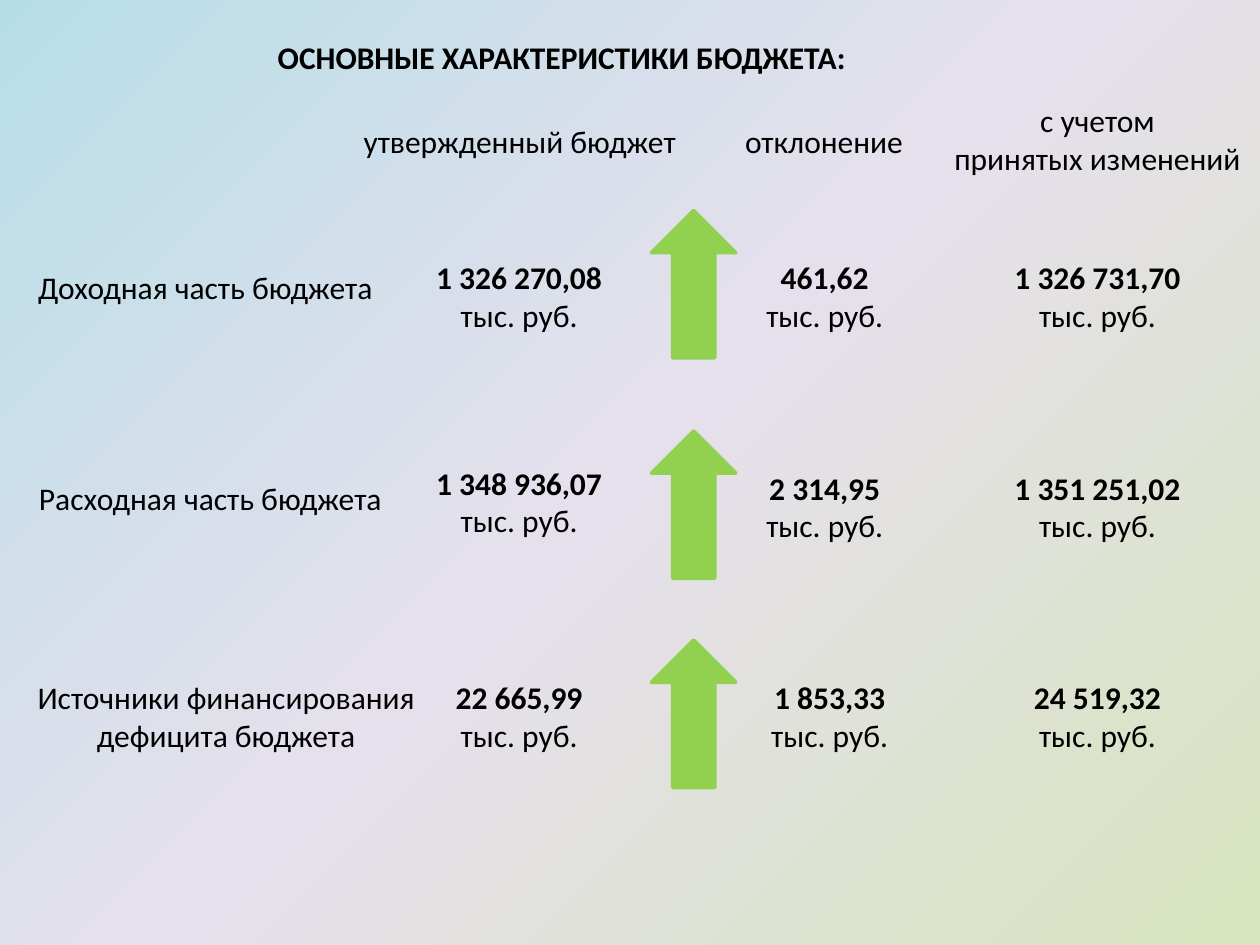
from pptx import Presentation
from pptx.dml.color import RGBColor
from pptx.enum.shapes import MSO_SHAPE
from pptx.enum.text import MSO_ANCHOR, MSO_AUTO_SIZE, PP_ALIGN
from pptx.oxml import parse_xml
from pptx.oxml.ns import nsdecls
from pptx.util import Inches, Pt

BLACK = RGBColor(0x00, 0x00, 0x00)
GREEN = RGBColor(0x92, 0xD0, 0x50)
BACKDROP = {
    0: RGBColor(0xD7, 0xE4, 0xBD),
    50: RGBColor(0xE6, 0xE0, 0xEC),
    100: RGBColor(0xB7, 0xDE, 0xE8),
}

FONT = {"name": "Calibri", "size": Pt(18)}
FRAME = {"vertical_anchor": MSO_ANCHOR.TOP, "auto_size": MSO_AUTO_SIZE.SHAPE_TO_FIT_TEXT}
UNIT = "тыс. руб."
LINE_HEIGHT, TWO_LINES = 0.4, 0.71

# Boxes are left, top, width, height in inches
TITLE = ("ОСНОВНЫЕ ХАРАКТЕРИСТИКИ БЮДЖЕТА:", (2.08, 0.25, 4.76, LINE_HEIGHT))
HEADINGS = [
    (["утвержденный бюджет"], (2.75, 0.92, 2.75, LINE_HEIGHT)),
    (["отклонение"], (5.75, 0.92, 1.58, LINE_HEIGHT)),
    (["с учетом", "принятых изменений"], (7.42, 0.75, 2.58, TWO_LINES)),
]
LABEL_LEFT = 0.17
ARROW_LEFT, ARROW_WIDTH, ARROW_HEIGHT = 5.17, 0.67, 1.17
# Each amount: value, left, top, width
ROWS = [
    {
        "label": ("Доходная часть бюджета", 2.08, 2.92, LINE_HEIGHT),
        "arrow_top": 1.67,
        "amounts": [("1 326 270,08", 3.33, 2, 1.58), ("461,62", 5.92, 2, 1.25),
                    ("1 326 731,70", 7.75, 2, 1.92)],
    },
    {
        "label": ("Расходная часть бюджета", 3.75, 3, LINE_HEIGHT),
        "arrow_top": 3.42,
        "amounts": [("1 348 936,07", 3.33, 3.63, 1.58), ("2 314,95", 5.92, 3.67, 1.25),
                    ("1 351 251,02", 7.92, 3.67, 1.58)],
    },
    {
        "label": ("Источники финансирования дефицита бюджета", 5.33, 3.25, TWO_LINES),
        "arrow_top": 5.08,
        "amounts": [("22 665,99", 3.33, 5.33, 1.58), ("1 853,33", 5.92, 5.33, 1.33),
                    ("24 519,32", 7.92, 5.33, 1.58)],
    },
]


def apply_format(target, values):
    for attribute, value in values.items():
        setattr(target, attribute, value)


def write_lines(frame, lines, wrap=True):
    """Fill a text frame with centred (text, bold) lines."""
    apply_format(frame, FRAME | {"word_wrap": wrap})
    for index, (text, bold) in enumerate(lines):
        paragraph = frame.add_paragraph() if index else frame.paragraphs[0]
        paragraph.alignment = PP_ALIGN.CENTER
        run = paragraph.add_run()
        run.text = text
        apply_format(run.font, FONT | {"bold": bold})
        run.font.color.rgb = BLACK


def add_text(slide, box, lines):
    write_lines(slide.shapes.add_textbox(*map(Inches, box)).text_frame, lines)


def paint_background(slide):
    """Spread the gradient from the lower right corner."""
    stops = "".join(
        f'<a:gs pos="{percent * 1000}"><a:srgbClr val="{color}"/></a:gs>'
        for percent, color in BACKDROP.items()
    )
    background = parse_xml(
        f'<p:bg {nsdecls("p", "a")}><p:bgPr><a:gradFill rotWithShape="1">'
        f'<a:gsLst>{stops}</a:gsLst><a:path path="circle">'
        '<a:fillToRect l="100000" t="100000"/></a:path></a:gradFill>'
        '<a:effectLst/></p:bgPr></p:bg>'
    )
    slide.element.cSld.insert(0, background)


def place_title(slide, text, box):
    title = slide.shapes.title
    apply_format(title, dict(zip(("left", "top", "width", "height"), map(Inches, box))))
    write_lines(title.text_frame, [(text, True)], wrap=False)


def add_growth_arrow(slide, box):
    arrow = slide.shapes.add_shape(MSO_SHAPE.DOWN_ARROW, *map(Inches, box))
    arrow.rotation = 180
    arrow.shadow.inherit = False
    arrow.fill.solid()
    arrow.fill.fore_color.rgb = GREEN
    arrow.line.color.rgb = GREEN
    arrow.line.width = Pt(2)


def add_budget_row(slide, label, arrow_top, amounts):
    name, top, width, height = label
    add_text(slide, (LABEL_LEFT, top, width, height), [(name, False)])
    add_growth_arrow(slide, (ARROW_LEFT, arrow_top, ARROW_WIDTH, ARROW_HEIGHT))
    for amount, left, top, width in amounts:
        add_text(slide, (left, top, width, TWO_LINES), [(amount, True), (UNIT, False)])


def main():
    presentation = Presentation()
    presentation.slide_width = Inches(10)
    presentation.slide_height = Inches(7.5)
    slide = presentation.slides.add_slide(presentation.slide_layouts.get_by_name("Title Only"))
    paint_background(slide)
    place_title(slide, *TITLE)
    for lines, box in HEADINGS:
        add_text(slide, box, [(line, False) for line in lines])
    for row in ROWS:
        add_budget_row(slide, **row)
    presentation.save("out.pptx")


if __name__ == "__main__":
    main()
